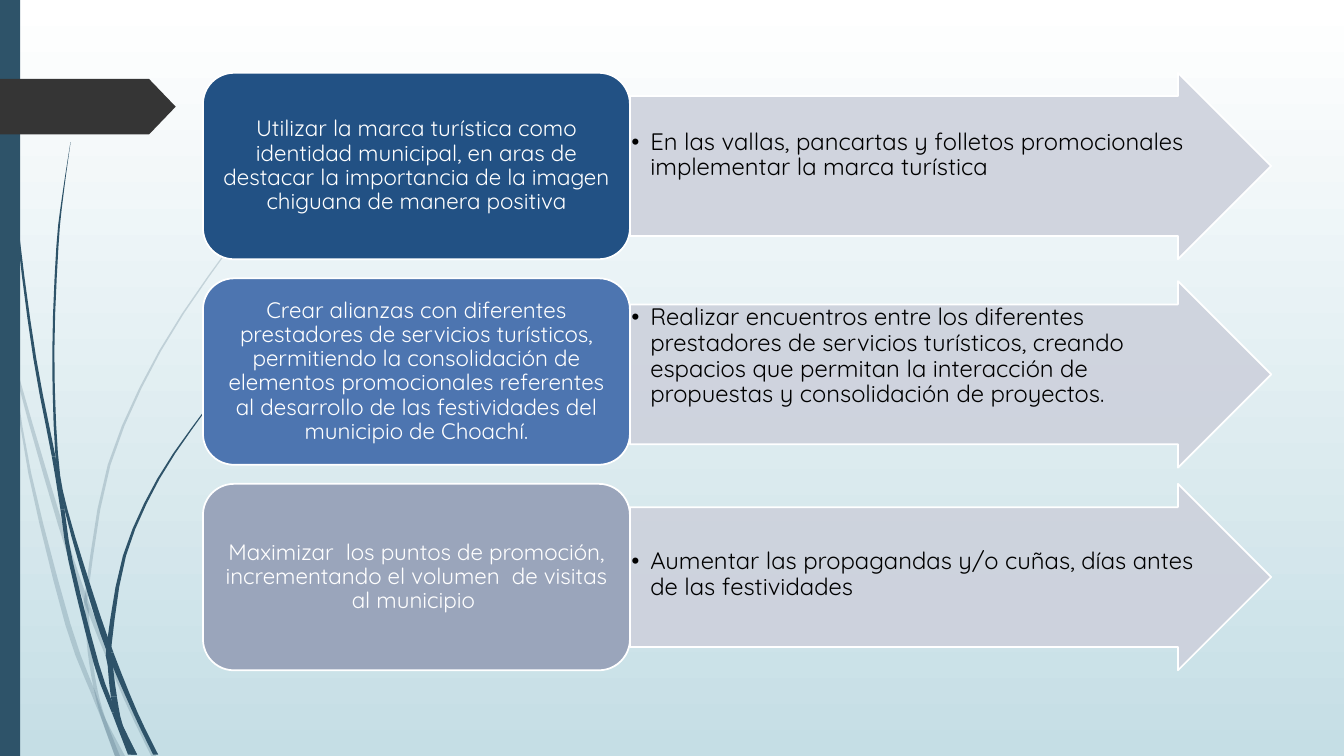
import pptx
import pptx.dml.color
import pptx.enum.shapes
import pptx.enum.text
import pptx.oxml
import pptx.oxml.ns
import pptx.util

Pt = pptx.util.Pt
SHAPES = pptx.enum.shapes.MSO_SHAPE
ALIGN = pptx.enum.text.PP_ALIGN
ANCHOR = pptx.enum.text.MSO_ANCHOR

FONT = "Quicksand"
COLORS = {
    "white": "FFFFFF",
    "black": "000000",
    "sky": "C5DEE5",
    "teal": "2E5369",
    "tag": "353535",
    "arrow": "CDD1DC",
    "navy": "225184",
    "blue": "4D75B0",
    "gray": "9AA5BB",
}

# Each stem: heights where it is jointed, then (left edge, right edge, height)
PALE_STEMS = [
    ((250, 495, 514),
     [(0, 0, 203), (0, 2.6, 215), (7.2, 7.9, 250), (20.2, 22.3, 338),
      (46.6, 50.4, 446), (65, 68.4, 495), (72.7, 75.6, 514), (82.1, 89.3, 540)]),
    ((435,),
     [(10.1, 10.1, 248.4), (12.2, 14.2, 271), (41.5, 45, 375),
      (62, 65.3, 435), (88.4, 91.8, 499), (108, 111.6, 540)]),
    ((420.5, 435, 492),
     [(224.6, 224.7, 110), (193, 193.8, 142), (164, 165, 176),
      (113.5, 115, 250.8), (77, 79, 332), (61.2, 63.4, 420.5),
      (60.6, 63.4, 435), (62.6, 65.5, 465), (67, 69.5, 492),
      (72.7, 75.6, 514), (82.1, 85.7, 540)]),
]
DARK_STEMS = [
    ((326, 364, 509),
     [(2.2, 2.9, 0), (5, 5.8, 79), (12.2, 13.7, 167), (23.8, 25.9, 256),
      (37, 39.6, 326), (43.2, 46.1, 364), (49, 52, 401), (67, 70.6, 474),
      (79.9, 83.5, 509), (91.4, 97.9, 539)]),
    ((325, 466),
     [(50.4, 50.5, 101.5), (44.6, 45.4, 139), (40.3, 41.8, 176),
      (37.4, 38.9, 251), (39.6, 41.5, 325), (46.1, 48.2, 364),
      (63.1, 67, 425.5), (76.5, 81, 466), (95, 98.3, 509), (109.4, 113, 539)]),
    ((460, 475, 497.5, 519),
     [(187.2, 187.9, 247.7), (166, 166.8, 268.6), (146.9, 147.8, 292),
      (112.3, 114, 342), (87.8, 90, 397), (76.3, 79.8, 460), (76.9, 80.6, 475),
      (79.2, 83.5, 497.5), (84.2, 88, 519), (93.6, 97.9, 539)]),
]

# Box colour, strategy, action, arrow shift, space above the action
STRATEGIES = [
    ("navy",
     "Utilizar la marca turística como identidad municipal, en aras de "
     "destacar la importancia de la imagen chiguana de manera positiva",
     "En las vallas, pancartas y folletos promocionales implementar la "
     "marca turística", 0, 24),
    ("blue",
     "Crear alianzas con diferentes prestadores de servicios turísticos, "
     "permitiendo la consolidación de elementos promocionales referentes "
     "al desarrollo de las festividades del municipio de Choachí.",
     "Realizar encuentros entre los diferentes prestadores de servicios "
     "turísticos, creando espacios que permitan la interacción de "
     "propuestas y consolidación de proyectos.", 2, 0.5),
    ("gray",
     "Maximizar  los puntos de promoción, incrementando el volumen  de "
     "visitas al municipio ",
     "Aumentar las propagandas y/o cuñas, días antes de las festividades",
     0, 30),
]
ROW_TOP, ROW_PITCH, ROW_HEIGHT = 52, 146.8, 133.2
BOX_LEFT, BOX_WIDTH, ARROW_WIDTH = 145, 305, 458
ACTION_WIDTH = 408


def rgb(name):
    return pptx.dml.color.RGBColor.from_string(COLORS[name])


def paint(shape, color, opacity=100, outline=None):
    shape.shadow.inherit = False
    shape.fill.solid()
    shape.fill.fore_color.rgb = rgb(color)
    if opacity < 100:
        color_element = shape.fill._xPr.find(".//" + pptx.oxml.ns.qn("a:srgbClr"))
        alpha = pptx.oxml.parse_xml(
            f'<a:alpha {pptx.oxml.ns.nsdecls("a")} val="{opacity * 1000}"/>')
        color_element.append(alpha)
    if outline:
        shape.line.color.rgb = rgb(outline)
        shape.line.width = Pt(1.25)
    else:
        shape.line.fill.background()


def add_preset(slide, kind, left, top, width, height, color, **style):
    shape = slide.shapes.add_shape(kind, Pt(left), Pt(top), Pt(width), Pt(height))
    paint(shape, color, **style)
    return shape


def smooth(knots, steps):
    """Run a Catmull-Rom curve through the knots."""
    padded = [knots[0], *knots, knots[-1]]
    points = []
    for a, b, c, d in zip(padded, padded[1:], padded[2:], padded[3:]):
        for step in range(steps):
            t = step / steps
            points.append([
                q + t * (r - p) / 2
                + t ** 2 * (2 * p - 5 * q + 4 * r - s) / 2
                + t ** 3 * (3 * q - p - 3 * r + s) / 2
                for p, q, r, s in zip(a, b, c, d)])
    return points + [knots[-1]]


def add_stem(slide, joints, knots, opacity, steps=3):
    curve = smooth(knots, steps)
    cuts = [steps * i for i, knot in enumerate(knots) if knot[2] in joints]
    for start, end in zip([0, *cuts], [*cuts, len(curve) - 1]):
        section = curve[start:end + 1]
        outline = [(Pt(left), Pt(y)) for left, right, y in section]
        outline += [(Pt(right), Pt(y)) for left, right, y in reversed(section)]
        builder = slide.shapes.build_freeform(*outline[0])
        builder.add_line_segments(outline[1:], close=True)
        paint(builder.convert_to_shape(), "teal", opacity)


def write(shape, text, size, color, align, anchor, margins):
    frame = shape.text_frame
    frame.word_wrap = True
    frame.vertical_anchor = anchor
    (frame.margin_left, frame.margin_top,
     frame.margin_right, frame.margin_bottom) = [Pt(margin) for margin in margins]
    paragraph = frame.paragraphs[0]
    paragraph.alignment = align
    paragraph.line_spacing = 0.9
    run = paragraph.add_run()
    run.text = text
    run.font.name = FONT
    run.font.size = Pt(size)
    run.font.color.rgb = rgb(color)
    return paragraph


def add_bullet(paragraph, indent):
    properties = paragraph._p.get_or_add_pPr()
    properties.set("marL", str(Pt(indent)))
    properties.set("indent", str(-Pt(indent)))
    for tag in (f'buFont {pptx.oxml.ns.nsdecls("a")} typeface="{FONT}"',
                f'buChar {pptx.oxml.ns.nsdecls("a")} char="•"'):
        properties.append(pptx.oxml.parse_xml(f"<a:{tag}/>"))


def add_strategy(slide, top, color, strategy, action, shift, space_above):
    arrow_left, arrow_top = BOX_LEFT + BOX_WIDTH, top + shift
    arrow = add_preset(slide, SHAPES.RIGHT_ARROW, arrow_left, arrow_top,
                       ARROW_WIDTH, ROW_HEIGHT, "arrow", opacity=90, outline="white")
    arrow.adjustments[0] = 0.75
    label = slide.shapes.add_textbox(Pt(arrow_left), Pt(arrow_top + ROW_HEIGHT / 8),
                                     Pt(ACTION_WIDTH), Pt(ROW_HEIGHT * 0.75))
    paragraph = write(label, action, 17, "black", ALIGN.LEFT, ANCHOR.TOP,
                      (1, space_above, 1, 1))
    add_bullet(paragraph, 13.5)
    box = add_preset(slide, SHAPES.ROUNDED_RECTANGLE, BOX_LEFT, top,
                     BOX_WIDTH, ROW_HEIGHT, color, outline="white")
    write(box, strategy, 16, "white", ALIGN.CENTER, ANCHOR.MIDDLE, (5, 2.5, 5, 2.5))


def add_background(slide):
    fill = slide.background.fill
    fill.gradient()
    fill.gradient_angle = 270
    for stop, color in zip(fill.gradient_stops, ("white", "sky")):
        stop.color.rgb = rgb(color)


def main():
    presentation = pptx.Presentation()
    presentation.slide_width, presentation.slide_height = Pt(960), Pt(540)
    slide = presentation.slides.add_slide(presentation.slide_layouts[6])

    # Backdrop: gradient, grass stems, side band and page tag
    add_background(slide)
    for stems, opacity in ((PALE_STEMS, 20), (DARK_STEMS, 100)):
        for joints, knots in stems:
            add_stem(slide, joints, knots, opacity)
    add_preset(slide, SHAPES.RECTANGLE, 0, 0, 14.4, 540, "teal")
    tag = add_preset(slide, SHAPES.PENTAGON, 0, 56.4, 125.5, 39.6, "tag")
    tag.adjustments[0] = 0.48

    # Strategies, each with its action arrow
    for row, strategy in enumerate(STRATEGIES):
        add_strategy(slide, ROW_TOP + row * ROW_PITCH, *strategy)

    presentation.save("out.pptx")


if __name__ == "__main__":
    main()
